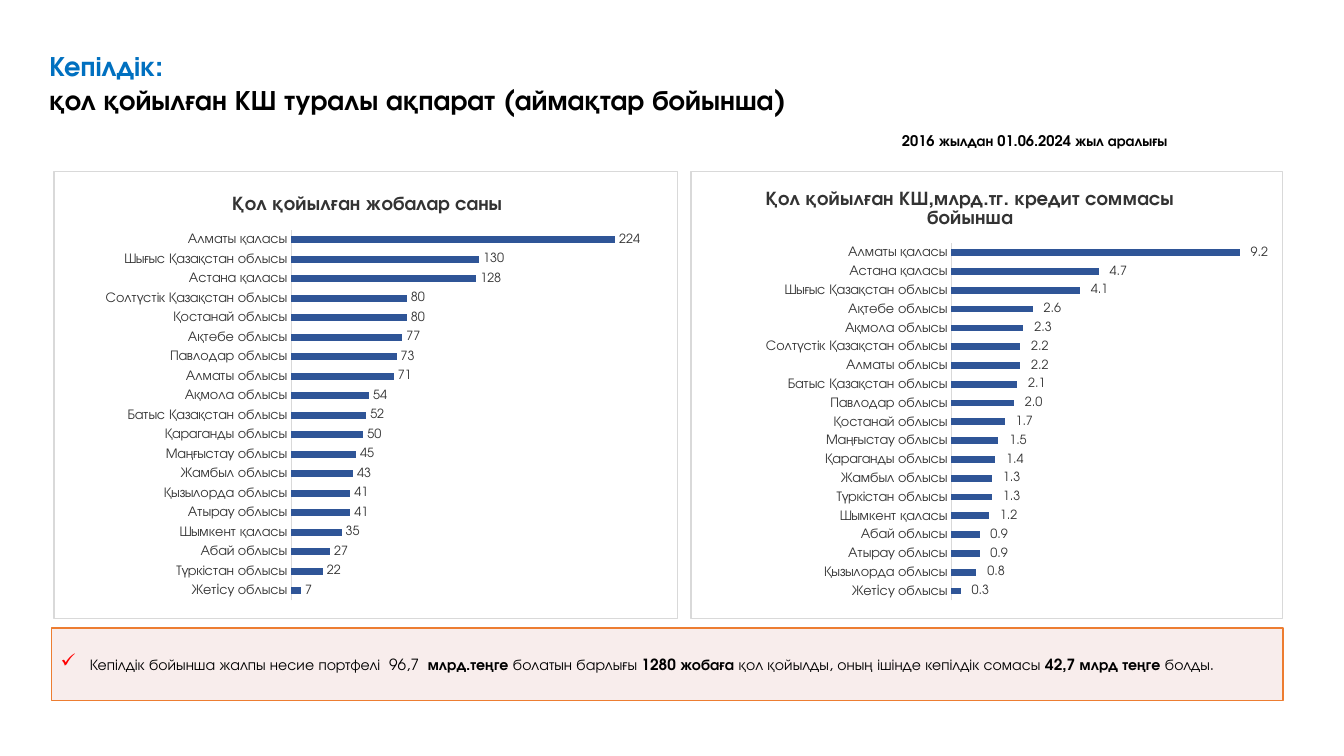
from lxml import etree
from pptx import Presentation
from pptx.chart.data import CategoryChartData
from pptx.dml.color import RGBColor
from pptx.enum.chart import XL_CHART_TYPE, XL_LABEL_POSITION, XL_TICK_MARK
from pptx.enum.shapes import MSO_SHAPE
from pptx.enum.text import MSO_ANCHOR, MSO_AUTO_SIZE, PP_ALIGN
from pptx.oxml import parse_xml
from pptx.oxml.ns import nsdecls, qn
from pptx.util import Pt

BAR_CLUSTERED = XL_CHART_TYPE.BAR_CLUSTERED
OUTSIDE_END = XL_LABEL_POSITION.OUTSIDE_END
NO_TICK = XL_TICK_MARK.NONE
RECTANGLE = MSO_SHAPE.RECTANGLE
TOP, MIDDLE = MSO_ANCHOR.TOP, MSO_ANCHOR.MIDDLE
LEFT = PP_ALIGN.LEFT
FIT_SHAPE = MSO_AUTO_SIZE.SHAPE_TO_FIT_TEXT

FONT = "TeX Gyre Adventor"
BLACK = RGBColor(0x00, 0x00, 0x00)
BLUE = RGBColor(0x00, 0x70, 0xC0)
BAR_BLUE = RGBColor(0x2F, 0x55, 0x97)
DARK_GREY = RGBColor(0x33, 0x33, 0x33)
LIGHT_GREY = RGBColor(0xD9, 0xD9, 0xD9)
WHITE = RGBColor(0xFF, 0xFF, 0xFF)
RED = RGBColor(0xFF, 0x00, 0x00)
PINK = RGBColor(0xF2, 0xDC, 0xDB)
ORANGE = RGBColor(0xED, 0x7D, 0x31)

AMOUNT_FORMAT = r"_-* #\ ##0.0_р_._-;\-* #\ ##0.0_р_._-"

# Regions run from the bottom bar to the top bar.
PROJECT_COUNTS = {
    "Жетiсу облысы": 7, "Түркістан облысы": 22, "Абай облысы": 27,
    "Шымкент қаласы": 35, "Атырау облысы": 41, "Қызылорда облысы": 41,
    "Жамбыл облысы": 43, "Маңғыстау облысы": 45, "Қараганды облысы": 50,
    "Батыс Қазақстан облысы": 52, "Ақмола облысы": 54, "Алматы облысы": 71,
    "Павлодар облысы": 73, "Ақтөбе облысы": 77, "Қостанай облысы": 80,
    "Солтүстік Қазақстан облысы": 80, "Астана қаласы": 128,
    "Шығыс Қазақстан облысы": 130, "Алматы қаласы": 224,
}
LOAN_AMOUNTS = {
    "Жетiсу облысы": 0.3, "Қызылорда облысы": 0.8, "Атырау облысы": 0.9,
    "Абай облысы": 0.9, "Шымкент қаласы": 1.2, "Түркістан облысы": 1.3,
    "Жамбыл облысы": 1.3, "Қараганды облысы": 1.4, "Маңғыстау облысы": 1.5,
    "Қостанай облысы": 1.7, "Павлодар облысы": 2.0,
    "Батыс Қазақстан облысы": 2.1, "Алматы облысы": 2.2,
    "Солтүстік Қазақстан облысы": 2.2, "Ақмола облысы": 2.3,
    "Ақтөбе облысы": 2.6, "Шығыс Қазақстан облысы": 4.1,
    "Астана қаласы": 4.7, "Алматы қаласы": 9.2,
}
SUMMARY = [
    ("Кепілдік бойынша жалпы несие портфелі  96,7 ", False),
    (" млрд.теңге ", True),
    ("болатын барлығы ", False),
    ("1280 жобаға ", True),
    ("қол қойылды, оның ішінде кепілдік сомасы ", False),
    ("42,7 млрд теңге ", True),
    ("болды.", False),
]


def style_font(font, size, color, bold=False):
    font.name = FONT
    font.size = Pt(size)
    font.bold = bold
    font.color.rgb = color


def add_run(p, text, size, color, bold=False):
    r = p.add_run()
    r.text = text
    style_font(r.font, size, color, bold)


def add_heading(slide, x, y, w, h):
    s = slide.shapes.title
    s.left, s.top, s.width, s.height = Pt(x), Pt(y), Pt(w), Pt(h)
    tf = s.text_frame
    tf.vertical_anchor = TOP
    tf.auto_size = FIT_SHAPE
    p = tf.paragraphs[0]
    p.alignment = LEFT
    add_run(p, "Кепілдік:", 20, BLUE, True)
    p.add_line_break()
    add_run(p, "қол қойылған КШ туралы ақпарат (аймақтар бойынша)", 20, BLACK, True)


def add_period(slide, x, y, w, h):
    tf = slide.shapes.add_textbox(Pt(x), Pt(y), Pt(w), Pt(h)).text_frame
    tf.word_wrap = False
    tf.auto_size = FIT_SHAPE
    add_run(tf.paragraphs[0], "2016 жылдан 01.06.2024 жыл аралығы", 10.5, BLACK, True)


def set_layout(parent, index, x, y, w=None, h=None):
    """Place a chart part by fractions of the chart; a size means the inner plot."""
    for old in parent.findall(qn("c:layout")):
        parent.remove(old)
    values = [("xMode", "edge"), ("yMode", "edge"), ("x", x), ("y", y)]
    if w is not None:
        values = [("layoutTarget", "inner")] + values + [("w", w), ("h", h)]
    layout = parse_xml(f"<c:layout {nsdecls('c')}><c:manualLayout/></c:layout>")
    for tag, value in values:
        etree.SubElement(layout[0], qn(f"c:{tag}"), val=str(value))
    parent.insert(index, layout)


def frame_chart(chart):
    """Give the whole chart area a white fill and a thin grey border."""
    sp_pr = parse_xml(
        f"<c:spPr {nsdecls('c', 'a')}>"
        f'<a:solidFill><a:srgbClr val="{WHITE}"/></a:solidFill>'
        f'<a:ln w="{Pt(0.75)}"><a:solidFill><a:srgbClr val="{LIGHT_GREY}"/>'
        "</a:solidFill></a:ln></c:spPr>")
    chart.element.find(qn("c:chart")).addnext(sp_pr)


def add_region_chart(slide, x, y, w, h, title, regions, axis_max, number_format,
                     title_at, plot_at):
    data = CategoryChartData()
    data.categories = list(regions)
    data.add_series("Series 1", list(regions.values()))
    chart = slide.shapes.add_chart(
        BAR_CLUSTERED, Pt(x), Pt(y), Pt(w), Pt(h), data).chart
    style_font(chart.font, 10, BLACK)
    chart.has_legend = False
    frame_chart(chart)

    chart.has_title = True
    heading = chart.chart_title
    heading.include_text_in_layout = False
    add_run(heading.text_frame.paragraphs[0], title, 14, DARK_GREY, True)
    set_layout(heading.element if hasattr(heading, "element") else heading._element,
               1, *title_at)

    axis = chart.category_axis
    axis.major_tick_mark = axis.minor_tick_mark = NO_TICK
    axis.has_major_gridlines = False
    axis.format.line.color.rgb = LIGHT_GREY
    axis.format.line.width = Pt(0.75)
    style_font(axis.tick_labels.font, 10, DARK_GREY)

    values = chart.value_axis
    values.minimum_scale, values.maximum_scale = 0, axis_max
    values.has_major_gridlines = False
    values.visible = False

    plot = chart.plots[0]
    plot.gap_width = 182
    plot.vary_by_categories = False
    fill = plot.series[0].format.fill
    fill.solid()
    fill.fore_color.rgb = BAR_BLUE
    plot.has_data_labels = True
    labels = plot.data_labels
    labels.show_value = True
    labels.position = OUTSIDE_END
    labels.number_format = number_format
    labels.number_format_is_linked = False
    style_font(labels.font, 9, DARK_GREY)
    set_layout(chart.element.find(f".//{qn('c:plotArea')}"), 0, *plot_at)


def add_summary(slide, x, y, w, h):
    s = slide.shapes.add_shape(RECTANGLE, Pt(x), Pt(y), Pt(w), Pt(h))
    s.shadow.inherit = False
    s.fill.solid()
    s.fill.fore_color.rgb = PINK
    color = s.fill._xPr.find(f".//{qn('a:srgbClr')}")
    etree.SubElement(color, qn("a:alpha"), val="50000")
    s.line.color.rgb = ORANGE
    s.line.width = Pt(1)
    tf = s.text_frame
    tf.word_wrap = True
    tf.vertical_anchor = MIDDLE
    tf.margin_left = tf.margin_right = Pt(5.8)
    tf.margin_top = tf.margin_bottom = Pt(2.9)
    p = tf.paragraphs[0]
    p_pr = p._p.get_or_add_pPr()
    p_pr.set("marL", str(Pt(21.6)))
    p_pr.set("indent", str(Pt(-20.9)))
    bullet_color = etree.SubElement(p_pr, qn("a:buClr"))
    etree.SubElement(bullet_color, qn("a:srgbClr"), val=str(RED))
    etree.SubElement(p_pr, qn("a:buSzPct"), val="125000")
    etree.SubElement(p_pr, qn("a:buChar"), char="✓")
    p.alignment = LEFT
    p.space_after = Pt(6)
    for text, bold in SUMMARY:
        add_run(p, text, 11, BLACK, bold)


def main():
    prs = Presentation()
    prs.slide_width, prs.slide_height = Pt(960), Pt(540)
    slide = prs.slides.add_slide(prs.slide_layouts[5])
    add_heading(slide, 28.1, 31, 617.8, 55.4)
    add_period(slide, 637.2, 90.7, 216.7, 20.2)
    add_summary(slide, 36.7, 448.6, 879.8, 51.8)
    add_region_chart(slide, 38.2, 122.4, 446.4, 319.7, "Қол қойылған жобалар саны",
                     PROJECT_COUNTS, 250, "General",
                     (0.28, 0.04), (0.38, 0.13, 0.58, 0.83))
    add_region_chart(slide, 493.2, 122.4, 423.4, 319.7,
                     "Қол қойылған КШ,млрд.тг. кредит соммасы бойынша",
                     LOAN_AMOUNTS, 10, AMOUNT_FORMAT,
                     (0.12, 0.03), (0.44, 0.16, 0.53, 0.8))
    prs.save("out.pptx")


if __name__ == "__main__":
    main()
